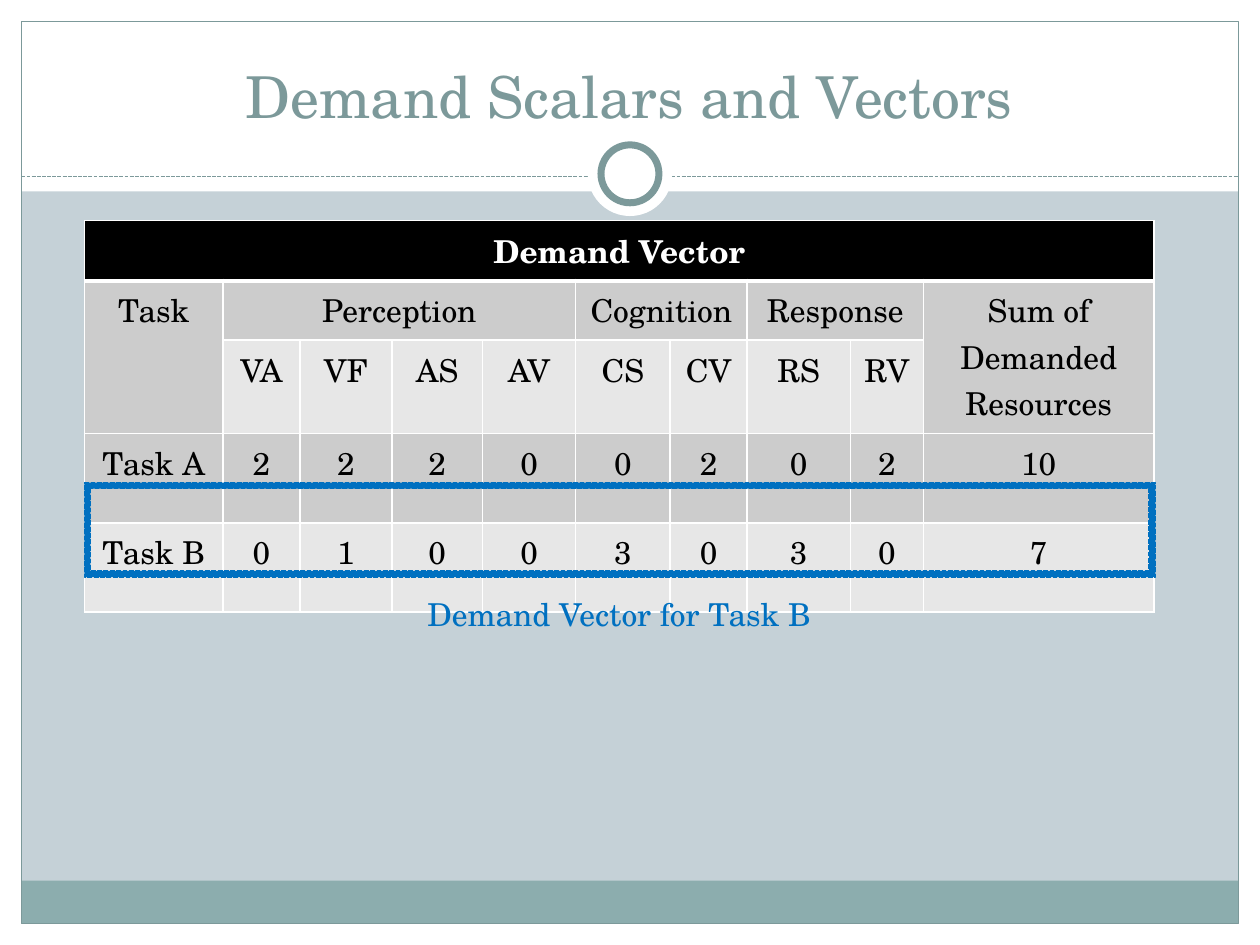
from lxml.etree import SubElement
from pptx import Presentation
from pptx.dml.color import RGBColor
from pptx.enum.dml import MSO_LINE
from pptx.enum.shapes import MSO_CONNECTOR, MSO_SHAPE
from pptx.enum.text import MSO_ANCHOR, PP_ALIGN
from pptx.oxml.ns import qn
from pptx.util import Inches, Pt

FONT = "TeX Gyre Schola"
WHITE = RGBColor(0xFF, 0xFF, 0xFF)
BLACK = RGBColor(0x00, 0x00, 0x00)
BACKGROUND = RGBColor(0xC5, 0xD1, 0xD7)
FOOTER = RGBColor(0x8C, 0xAD, 0xAE)
SAGE = RGBColor(0x7C, 0x99, 0x9A)
BLUE = RGBColor(0x00, 0x70, 0xC0)
DARK_BAND = RGBColor(0xCC, 0xCC, 0xCC)
LIGHT_BAND = RGBColor(0xE7, 0xE7, 0xE7)

COLUMN_WIDTHS = [1.1, 0.61, 0.73, 0.72, 0.74, 0.75, 0.61, 0.82, 0.58, 1.83]
ROW_HEIGHTS = [0.48, 0.47, 0.74, 0.71, 0.71]
ROW_FILLS = [BLACK, DARK_BAND, LIGHT_BAND, DARK_BAND, LIGHT_BAND]
ROWS = [
    ["Demand Vector"] + [""] * 9,
    ["Task", "Perception", "", "", "", "Cognition", "", "Response", "",
     "Sum of Demanded Resources"],
    ["", "VA", "VF", "AS", "AV", "CS", "CV", "RS", "RV", ""],
    ["Task A", "2", "2", "2", "0", "0", "2", "0", "2", "10"],
    ["Task B", "0", "1", "0", "0", "3", "0", "3", "0", "7"],
]
# First and last (row, column) of each merged cell
MERGES = [((0, 0), (0, 9)), ((1, 0), (2, 0)), ((1, 1), (1, 4)),
          ((1, 5), (1, 6)), ((1, 7), (1, 8)), ((1, 9), (2, 9))]


def add_preset(slide, preset, box, fill=None, line=None, line_width=0.75):
    shape = slide.shapes.add_shape(preset, *map(Inches, box))
    shape.shadow.inherit = False
    if fill is None:
        shape.fill.background()
    else:
        shape.fill.solid()
        shape.fill.fore_color.rgb = fill
    if line is None:
        shape.line.fill.background()
    else:
        shape.line.color.rgb = line
        shape.line.width = Pt(line_width)
    return shape


def style_text(text_frame, size, color, bold=False):
    for paragraph in text_frame.paragraphs:
        paragraph.alignment = PP_ALIGN.CENTER
        for run in paragraph.runs:
            run.font.name = FONT
            run.font.size = Pt(size)
            run.font.bold = bold
            run.font.color.rgb = color


def add_label(slide, box, text, size, color, anchor=MSO_ANCHOR.TOP):
    text_frame = slide.shapes.add_textbox(*map(Inches, box)).text_frame
    text_frame.word_wrap = True
    text_frame.vertical_anchor = anchor
    text_frame.text = text
    style_text(text_frame, size, color)


def add_divider(slide, left, right, y):
    divider = slide.shapes.add_connector(
        MSO_CONNECTOR.STRAIGHT, Inches(left), Inches(y), Inches(right), Inches(y))
    divider.line.color.rgb = SAGE
    divider.line.width = Pt(0.75)
    divider.line.dash_style = MSO_LINE.SQUARE_DOT
    SubElement(divider._element.spPr, qn("a:effectLst"))


def add_backdrop(slide, width, height):
    """White margins, footer bar, page border and the ringed divider."""
    slide.background.fill.solid()
    slide.background.fill.fore_color.rgb = BACKGROUND
    margin, header, divider_y = 0.17, 1.52, 1.4
    inner_width = width - 2 * margin
    for box in [(0, height - margin, width, margin), (0, 0, width, header),
                (0, 0, margin, height), (width - margin, 0, margin, height)]:
        add_preset(slide, MSO_SHAPE.RECTANGLE, box, WHITE)
    add_preset(slide, MSO_SHAPE.RECTANGLE, (margin, 6.99, inner_width, 0.34), FOOTER)
    add_preset(slide, MSO_SHAPE.RECTANGLE,
               (margin, margin, inner_width, height - 2 * margin), line=SAGE)
    add_divider(slide, margin, width - margin, divider_y)
    for diameter, line in [(0.67, None), (0.46, SAGE)]:
        box = ((width - diameter) / 2, 1.38 - diameter / 2, diameter, diameter)
        add_preset(slide, MSO_SHAPE.OVAL, box, WHITE, line, 4)


def set_borders(cell, widths):
    """Give the left, right, top and bottom edges white lines of these widths."""
    properties = cell._tc.get_or_add_tcPr()
    for side, width in zip("LRTB", widths):
        edge = SubElement(properties, qn(f"a:ln{side}"), w=str(Pt(width)))
        fill = SubElement(edge, qn("a:solidFill"))
        SubElement(fill, qn("a:srgbClr"), val=str(WHITE))


def add_demand_table(slide, box):
    table = slide.shapes.add_table(
        len(ROWS), len(COLUMN_WIDTHS), *map(Inches, box)).table
    for column, width in zip(table.columns, COLUMN_WIDTHS):
        column.width = Inches(width)
    for row, height in zip(table.rows, ROW_HEIGHTS):
        row.height = Inches(height)
    for first, last in MERGES:
        table.cell(*first).merge(table.cell(*last))
    for r, (texts, fill) in enumerate(zip(ROWS, ROW_FILLS)):
        is_header = r == 0
        top, bottom = 3 if r == 1 else 1, 3 if is_header else 1
        for c, text in enumerate(texts):
            cell = table.cell(r, c)
            set_borders(cell, (1, 1, top, bottom))
            cell.fill.solid()
            cell.fill.fore_color.rgb = fill
            cell.text_frame.text = text
            style_text(cell.text_frame, 18, WHITE if is_header else BLACK, is_header)


def add_highlight(slide, box):
    frame = add_preset(slide, MSO_SHAPE.FRAME, box, BLUE, BLUE, 0.9)
    frame.adjustments[0] = 0.065
    frame.line.dash_style = MSO_LINE.SQUARE_DOT


def main():
    presentation = Presentation()
    presentation.slide_width = Inches(10)
    presentation.slide_height = Inches(7.5)
    slide = presentation.slides.add_slide(presentation.slide_layouts[6])
    add_backdrop(slide, 10, 7.5)
    add_label(slide, (0.33, 0.25, 9.33, 0.83), "Demand Scalars and Vectors",
              33, SAGE, MSO_ANCHOR.BOTTOM)
    add_demand_table(slide, (0.67, 1.75, 8.5, sum(ROW_HEIGHTS)))
    add_label(slide, (3.16, 4.67, 3.51, 0.4), "Demand Vector for Task B", 18, BLUE)
    add_highlight(slide, (0.67, 3.83, 8.5, 0.75))
    presentation.save("out.pptx")


if __name__ == "__main__":
    main()
